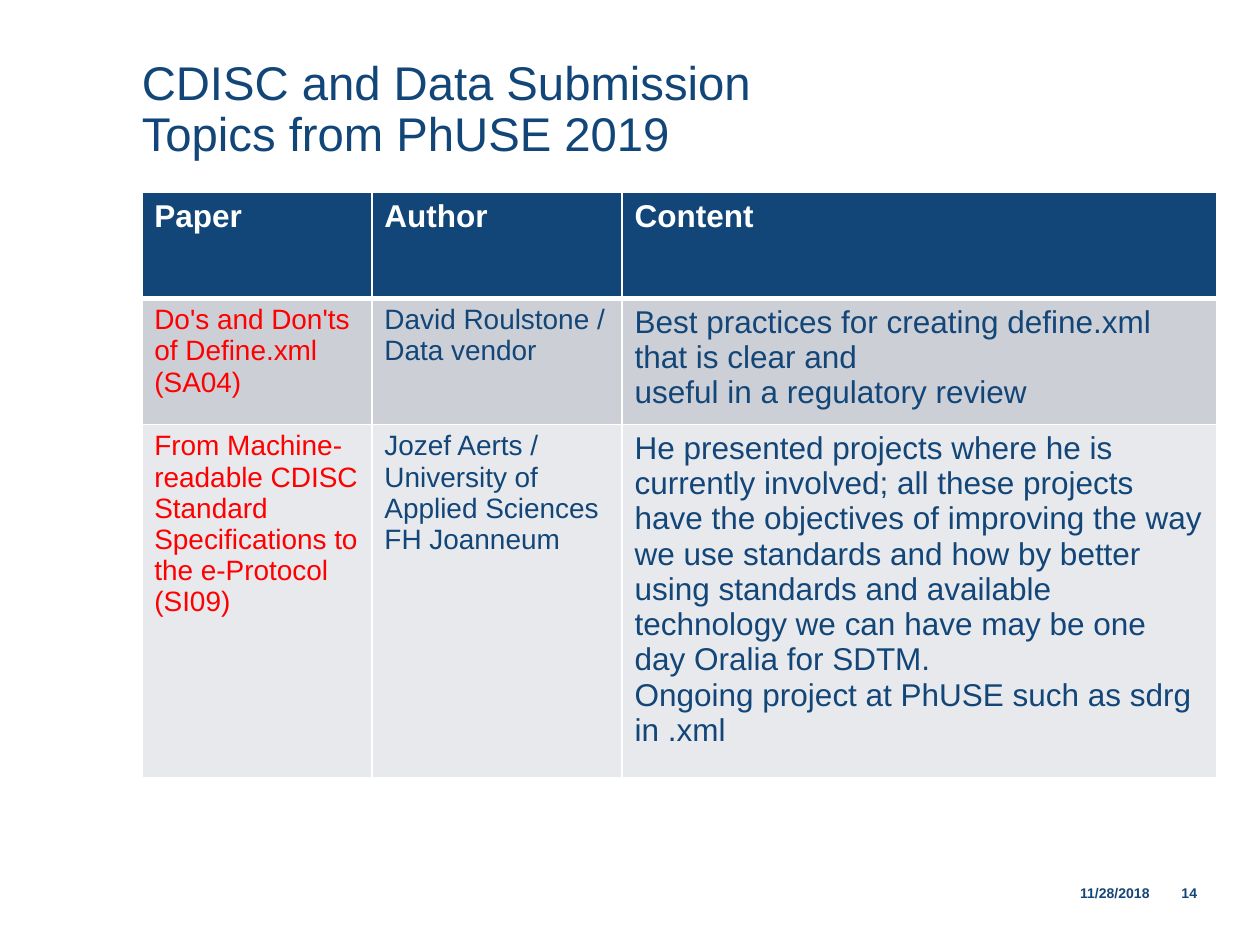
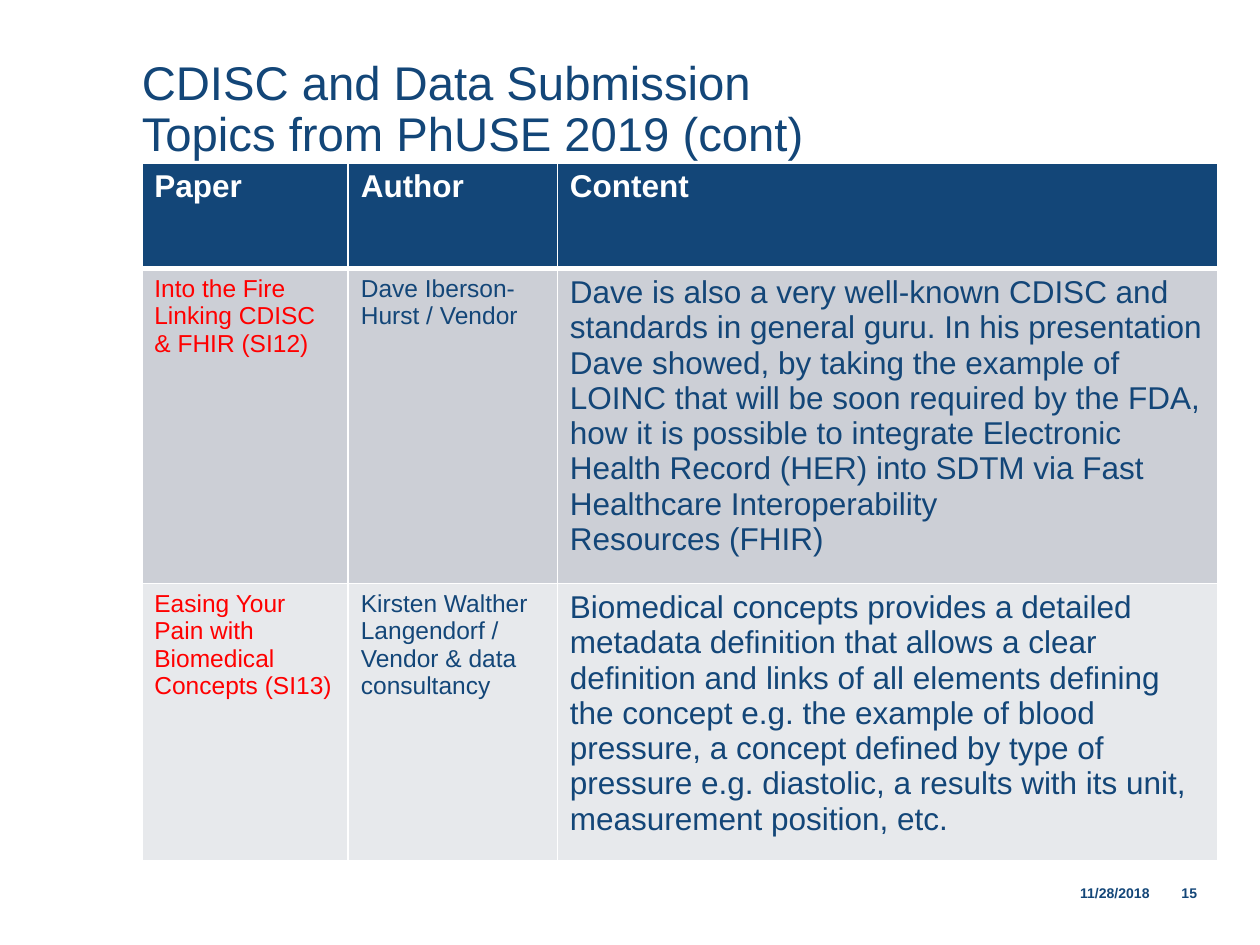
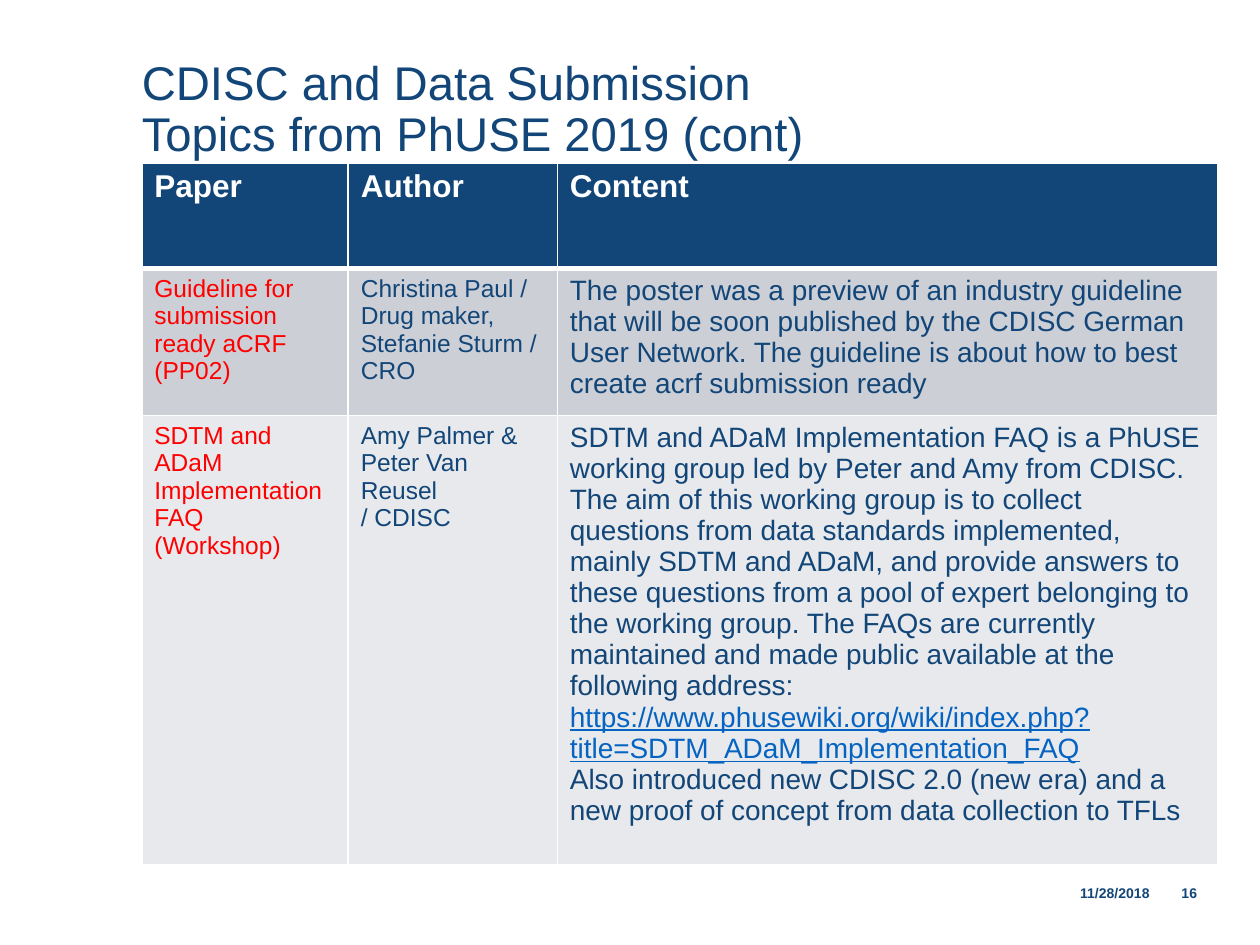
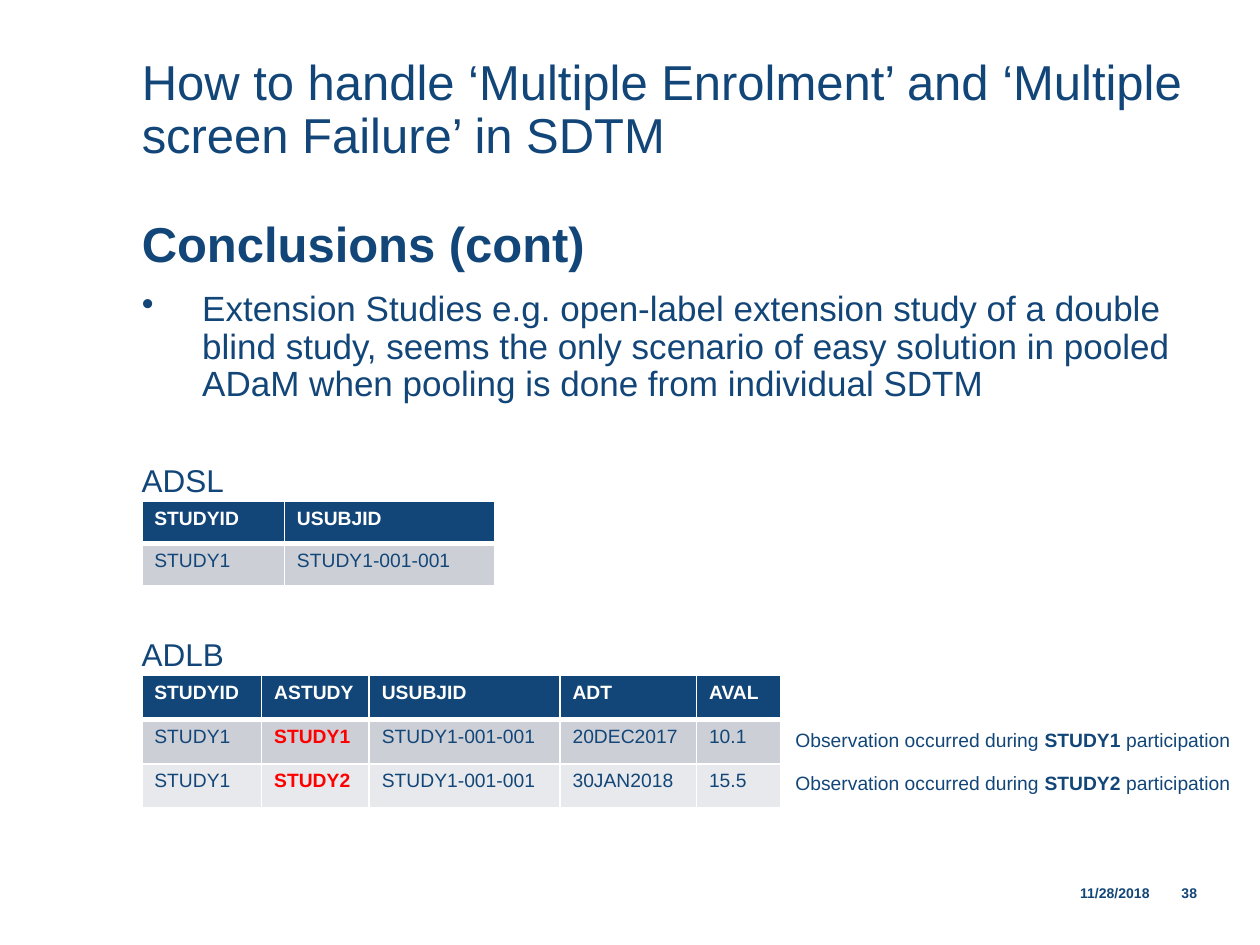
from lxml import etree
from pptx import Presentation
from pptx.dml.color import RGBColor
from pptx.enum.text import MSO_ANCHOR, PP_ALIGN
from pptx.oxml.ns import qn
from pptx.util import Pt

# Shared style
FONT = "Arial"
NAVY = RGBColor(0x13, 0x46, 0x78)
RED = RGBColor(0xFF, 0x00, 0x00)
WHITE = RGBColor(0xFF, 0xFF, 0xFF)
LINK_BLUE = RGBColor(0x05, 0x63, 0xC1)
BANDS = [RGBColor(0xCC, 0xCF, 0xD6), RGBColor(0xE7, 0xE9, 0xEC)]
LEFT = 81
TEXT_WIDTH = 603
DATE = "11/28/2018"


def add_text(page, text, left, top, width, height, size, bold=None,
             anchor=MSO_ANCHOR.TOP, align=PP_ALIGN.LEFT, wrap=True):
    box = page.shapes.add_textbox(Pt(left), Pt(top), Pt(width), Pt(height))
    frame = box.text_frame
    frame.margin_left = frame.margin_right = frame.margin_top = frame.margin_bottom = 0
    frame.word_wrap = wrap
    frame.vertical_anchor = anchor
    frame.text = text
    for para in frame.paragraphs:
        para.alignment = align
        para.font.name, para.font.size, para.font.bold = FONT, Pt(size), bold
        para.font.color.rgb = NAVY
    return frame


def add_grid(page, top, widths, row_height, rows, header_size, body_sizes, red_column=None):
    """Banded table with a navy header; body_sizes holds one size per column."""
    frame = page.shapes.add_table(len(rows), len(widths), Pt(LEFT), Pt(top),
                                  Pt(sum(widths)), Pt(row_height * len(rows)))
    table = frame.table
    for column, width in zip(table.columns, widths):
        column.width = Pt(width)
    for r, row in enumerate(rows):
        for c, text in enumerate(row):
            cell = table.cell(r, c)
            cell.text = text
            cell.fill.solid()
            cell.fill.fore_color.rgb = BANDS[(r - 1) % 2] if r else NAVY
            for para in cell.text_frame.paragraphs:
                para.font.name = FONT
                para.font.size = Pt(body_sizes[c] if r else header_size)
                para.font.bold = r == 0
                para.font.color.rgb = WHITE if r == 0 else RED if c == red_column else NAVY
            # White borders, heavier below the header
            line_widths = {"a:lnL": 1, "a:lnR": 1, "a:lnT": 3 if r == 1 else 1,
                           "a:lnB": 3 if r == 0 else 1}
            for place, (tag, width) in enumerate(line_widths.items()):
                line = etree.Element(qn(tag), w=str(Pt(width)))
                fill = etree.SubElement(line, qn("a:solidFill"))
                etree.SubElement(fill, qn("a:srgbClr"), val=str(WHITE))
                cell._tc.get_or_add_tcPr().insert(place, line)
    return table


deck = Presentation()
deck.slide_width, deck.slide_height = Pt(720), Pt(540)

# Titles and footers of all slides
TOPICS = "CDISC and Data Submission\vTopics from PhUSE 2019"
ENROLMENT = "How to handle ‘Multiple Enrolment’ and ‘Multiple screen Failure’ in SDTM"
pages = []
for title, title_size, number in [(TOPICS, 27, 14), (TOPICS + " (cont)", 27, 15),
                                  (TOPICS + " (cont)", 27, 16), (ENROLMENT, 28, 38)]:
    page = deck.slides.add_slide(deck.slide_layouts[6])
    heading = add_text(page, title, LEFT, 29, TEXT_WIDTH, 69, title_size,
                       anchor=MSO_ANCHOR.MIDDLE)
    heading.paragraphs[0].line_spacing = 0.9
    for text, left, width in [(DATE, 576, 81), (str(number), 657, 27)]:
        add_text(page, text, left, 502, width, 13, 8, bold=True,
                 anchor=MSO_ANCHOR.BOTTOM, align=PP_ALIGN.RIGHT)
    pages.append(page)

# Slides 1 to 3: papers
PAPER_HEADER = ["Paper", "Author", "Content"]
WIDE_CONTENT = [118, 119.5, 377.5]
paper_tables = [
    (110, [131.5, 143, 340], [16, 16, 18], [
        ["Do's and Don'ts of Define.xml (SA04)",
         "David Roulstone / Data vendor",
         "Best practices for creating define.xml that is clear and\n"
         "useful in a regulatory review"],
        ["From Machine-readable CDISC Standard Specifications to the e-Protocol (SI09)",
         "Jozef Aerts / University of Applied Sciences FH Joanneum",
         "He presented projects where he is currently involved; all these projects have the "
         "objectives of improving the way we use standards and how by better using standards "
         "and available technology we can have may be one day Oralia for SDTM.\n"
         "Ongoing project at PhUSE such as sdrg in .xml"],
    ]),
    (93, WIDE_CONTENT, [14, 14, 18], [
        ["Into the Fire Linking CDISC & FHIR (SI12)",
         "Dave Iberson-Hurst / Vendor",
         "Dave is also a very well-known CDISC and standards in general guru. In his "
         "presentation Dave showed, by taking the example of LOINC that will be soon required "
         "by the FDA, how it is possible to integrate Electronic Health Record (HER) into SDTM "
         "via Fast Healthcare Interoperability\n"
         "Resources (FHIR)"],
        ["Easing Your Pain with Biomedical Concepts (SI13)",
         "Kirsten Walther Langendorf / Vendor & data consultancy",
         "Biomedical concepts provides a detailed metadata definition that allows a clear "
         "definition and links of all elements defining the concept e.g. the example of blood "
         "pressure, a concept defined by type of pressure e.g. diastolic, a results with its "
         "unit, measurement position, etc."],
    ]),
    (93, WIDE_CONTENT, [14, 14, 16], [
        ["Guideline for submission ready aCRF (PP02)",
         "Christina Paul / Drug maker, Stefanie Sturm / CRO",
         "The poster was a preview of an industry guideline that will be soon published by the "
         "CDISC German User Network. The guideline is about how to best create acrf submission "
         "ready"],
        ["SDTM and ADaM\nImplementation\nFAQ (Workshop)",
         "Amy Palmer &\nPeter Van Reusel\n/ CDISC",
         "SDTM and ADaM Implementation FAQ is a PhUSE working group led by Peter and Amy from "
         "CDISC. The aim of this working group is to collect questions from data standards "
         "implemented, mainly SDTM and ADaM, and provide answers to these questions from a pool "
         "of expert belonging to the working group. The FAQs are currently maintained and made "
         "public available at the following address: \n"
         "Also introduced new CDISC 2.0 (new era) and a new proof of concept from data "
         "collection to TFLs"],
    ]),
]
for page, (top, widths, sizes, papers) in zip(pages, paper_tables):
    table = add_grid(page, top, widths, 60.5, [PAPER_HEADER] + papers, 18, sizes, red_column=0)

# Web address in the last cell of slide 3
address = table.cell(2, 2).text_frame.paragraphs[0].add_run()
address.text = "https://www.phusewiki.org/wiki/index.php?title=SDTM_ADaM_Implementation_FAQ"
address.font.underline = True
address.font.color.rgb = LINK_BLUE

# Slide 4: conclusions
page = pages[3]
conclusions = add_text(
    page,
    "Conclusions (cont)\n"
    "Extension Studies e.g. open-label extension study of a double blind study, seems the only "
    "scenario of easy solution in pooled ADaM when pooling is done from individual SDTM",
    LEFT, 126, TEXT_WIDTH, 132, 20)
heading, point = conclusions.paragraphs
heading.line_spacing = point.line_spacing = 0.9
heading.font.size, heading.font.bold = Pt(28), True
point.space_before = Pt(10)
properties = point._p.get_or_add_pPr()
properties.set("marL", str(Pt(34.5)))
properties.set("indent", str(Pt(-34.5)))
bullet = etree.Element(qn("a:buChar"), char="•")
properties.find(qn("a:defRPr")).addprevious(bullet)

# Example data sets
for name, top in [("ADSL", 263.5), ("ADLB", 363)]:
    add_text(page, name, LEFT, top, 72, 24, 18, wrap=False)
add_grid(page, 286.5, [81.5, 120], 24.25,
         [["STUDYID", "USUBJID"], ["STUDY1", "STUDY1-001-001"]], 11, [11] * 2)
observations = add_grid(page, 386, [68.5, 61.5, 109, 78, 48], 25.25, [
    ["STUDYID", "ASTUDY", "USUBJID", "ADT", "AVAL"],
    ["STUDY1", "STUDY1", "STUDY1-001-001", "20DEC2017", "10.1"],
    ["STUDY1", "STUDY2", "STUDY1-001-001", "30JAN2018", "15.5"],
], 11, [11] * 5, red_column=1)

# Notes beside the observations
for row, top in [(1, 416), (2, 440.5)]:
    study = observations.cell(row, 1).text_frame.paragraphs[0]
    study.font.bold = True
    note = add_text(page, "Observation occurred during ", 454.5, top, 250, 22, 11, wrap=False)
    for text, bold in [(study.text, True), (" participation", False)]:
        span = note.paragraphs[0].add_run()
        span.text, span.font.bold = text, bold

deck.save("out.pptx")
